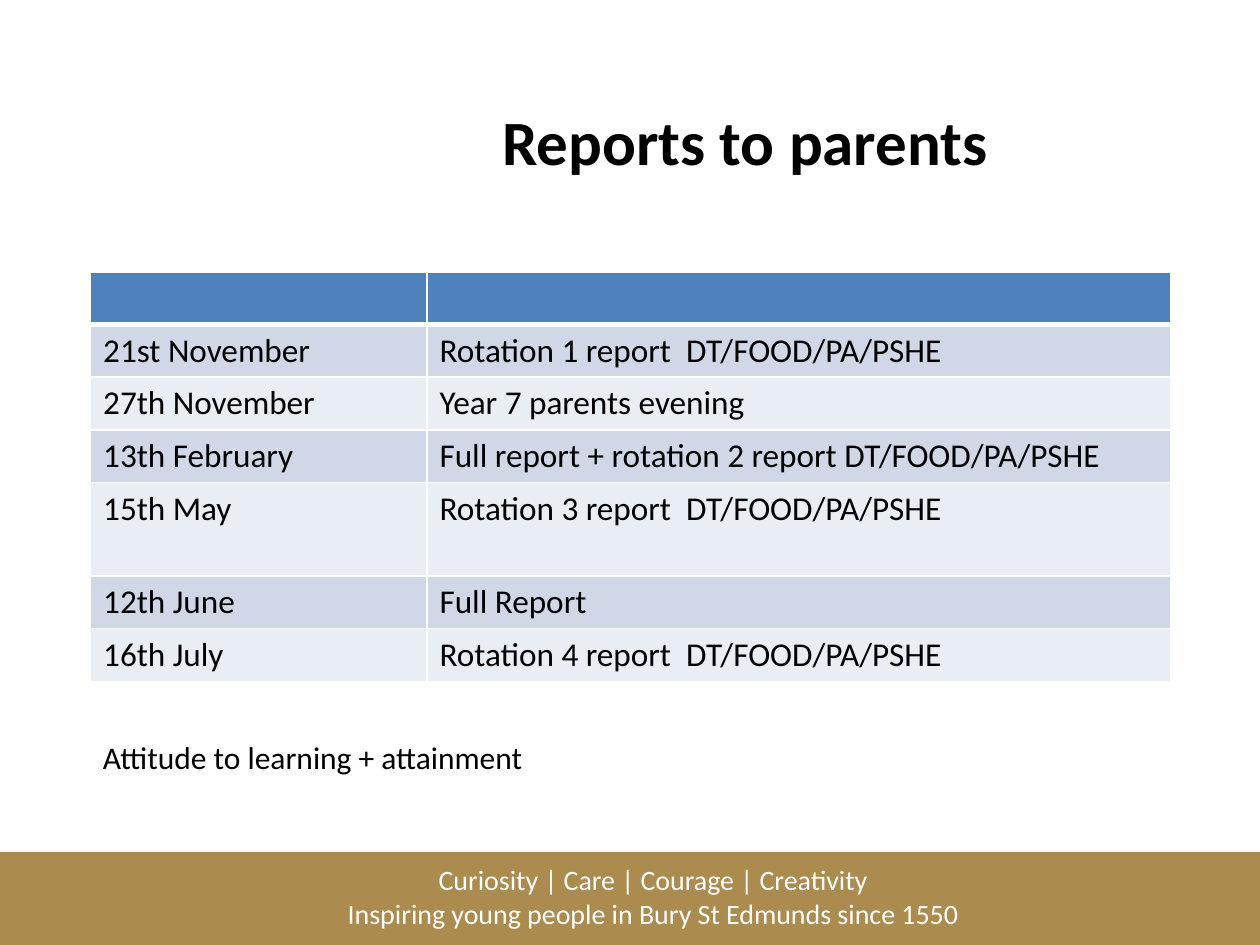
from dataclasses import dataclass

from lxml.etree import SubElement
from pptx import Presentation
from pptx.dml.color import RGBColor
from pptx.enum.shapes import MSO_SHAPE
from pptx.enum.text import MSO_ANCHOR, PP_ALIGN
from pptx.oxml.ns import qn
from pptx.util import Pt


@dataclass(frozen=True)
class Theme:
    """Colours, font and type sizes of the slide."""

    font: str = "Calibri"
    black: str = "000000"
    white: str = "FFFFFF"
    gold: str = "AC8B4E"
    header: str = "4F81BD"
    bands: tuple = ("D0D8E8", "E9EDF4")
    title_size: int = 36
    table_size: int = 19
    note_size: int = 18
    footer_size: int = 16


class SlideBuilder:
    """Draws styled elements on the current slide."""

    def __init__(self, page, theme):
        """Keep the page and its theme."""
        self.page = page
        self.theme = theme

    def fill_text(self, frame, lines, size, color, align=PP_ALIGN.LEFT, bold=False):
        """Fill a text frame with one paragraph per line."""
        frame.word_wrap = True
        for index, line in enumerate(lines):
            para = frame.add_paragraph() if index else frame.paragraphs[0]
            para.alignment = align
            span = para.add_run()
            span.text = line
            span.font.name = self.theme.font
            span.font.size = Pt(size)
            span.font.bold = bold
            span.font.color.rgb = RGBColor.from_string(color)

    def title(self, text, *bounds):
        """Place and format the title placeholder."""
        box = self.page.shapes.title
        box.left, box.top, box.width, box.height = map(Pt, bounds)
        box.text_frame.vertical_anchor = MSO_ANCHOR.MIDDLE
        self.fill_text(box.text_frame, [text], self.theme.title_size,
                       self.theme.black, PP_ALIGN.CENTER, True)

    def bar(self, color, *bounds):
        """Draw a plain filled rectangle."""
        box = self.page.shapes.add_shape(MSO_SHAPE.RECTANGLE, *map(Pt, bounds))
        box.shadow.inherit = False
        box.fill.solid()
        box.fill.fore_color.rgb = RGBColor.from_string(color)
        box.line.fill.background()

    def text(self, lines, size, color, align, *bounds):
        """Add a wrapping text box."""
        box = self.page.shapes.add_textbox(*map(Pt, bounds))
        self.fill_text(box.text_frame, lines, size, color, align)

    def cell(self, cell, fill, bottom=1):
        """Give a cell its white borders and its fill."""
        properties = cell._tc.get_or_add_tcPr()
        for side, width in (("L", 1), ("R", 1), ("T", 1), ("B", bottom)):
            line = SubElement(properties, qn(f"a:ln{side}"), w=str(Pt(width)))
            solid = SubElement(line, qn("a:solidFill"))
            SubElement(solid, qn("a:srgbClr"), val=self.theme.white)
        cell.fill.solid()
        cell.fill.fore_color.rgb = RGBColor.from_string(fill)

    def table(self, rows, widths, heights, left, top):
        """Add a banded table below an empty header row."""
        bounds = map(Pt, (left, top, sum(widths), sum(heights)))
        table = self.page.shapes.add_table(len(heights), len(widths), *bounds).table
        for column, width in zip(table.columns, widths):
            column.width = Pt(width)
        for row, height in zip(table.rows, heights):
            row.height = Pt(height)
        for cell in table.rows[0].cells:
            self.cell(cell, self.theme.header, 3)
        for index, values in enumerate(rows):
            for cell, value in zip(table.rows[index + 1].cells, values):
                self.cell(cell, self.theme.bands[index % 2])
                self.fill_text(cell.text_frame, [value], self.theme.table_size,
                               self.theme.black)


REPORTS = [
    ("21st November", "Rotation 1 report  DT/FOOD/PA/PSHE"),
    ("27th November", "Year 7 parents evening"),
    ("13th February", "Full report + rotation 2 report DT/FOOD/PA/PSHE"),
    ("15th May", "Rotation 3 report  DT/FOOD/PA/PSHE"),
    ("12th June", "Full Report"),
    ("16th July", "Rotation 4 report  DT/FOOD/PA/PSHE"),
]
FOOTER = [
    "Curiosity | Care | Courage | Creativity",
    "Inspiring young people in Bury St Edmunds since 1550",
]


def main():
    """Build and save the deck."""
    theme = Theme()
    deck = Presentation()
    deck.slide_width, deck.slide_height = Pt(720), Pt(540)
    page = deck.slides.add_slide(deck.slide_layouts[5])
    builder = SlideBuilder(page, theme)
    builder.bar(theme.gold, 0, 487, 720, 53)
    builder.text(FOOTER, theme.footer_size, theme.white, PP_ALIGN.CENTER,
                 82, 489.6, 582.5, 46)
    builder.title("Reports to parents", 172, 35.3, 507.6, 90)
    heights = [53.2 if date == "15th May" else 30.2 for date, _ in REPORTS]
    builder.table(REPORTS, (192.2, 424.8), [29.5, *heights], 51.8, 155.8)
    builder.text(["Attitude to learning + attainment"], theme.note_size,
                 theme.black, PP_ALIGN.LEFT, 51.8, 418.3, 276.5, 29)
    deck.save("out.pptx")


if __name__ == "__main__":
    main()
